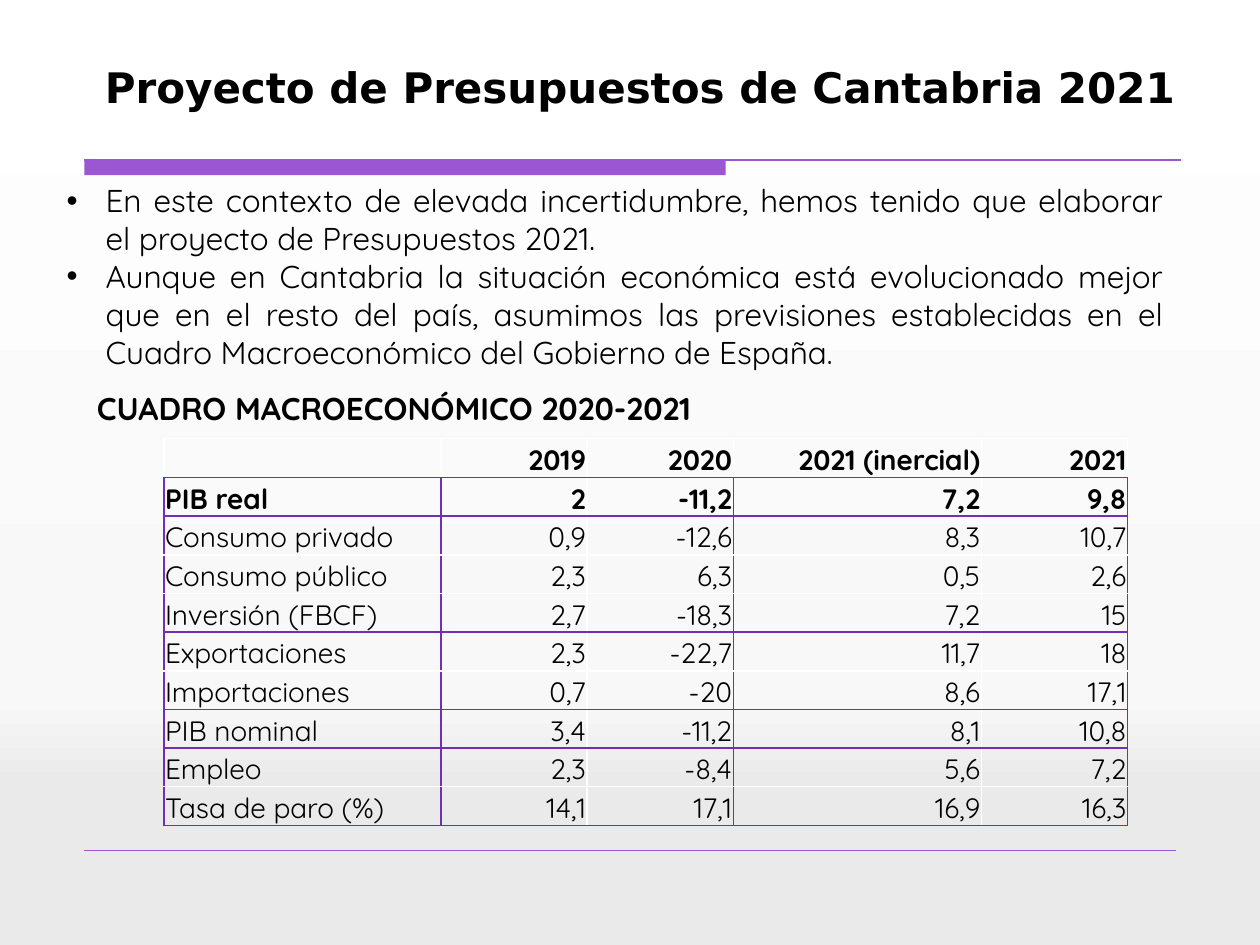
"""Build the macroeconomic table slide of the Cantabria 2021 budget."""
from dataclasses import dataclass

import lxml.etree
import pptx
import pptx.dml.color
import pptx.enum.shapes
import pptx.enum.text
import pptx.oxml
import pptx.oxml.ns
import pptx.slide
import pptx.table
import pptx.text.text
import pptx.util

Inches = pptx.util.Inches
Pt = pptx.util.Pt
RGBColor = pptx.dml.color.RGBColor
Align = pptx.enum.text.PP_ALIGN
Anchor = pptx.enum.text.MSO_ANCHOR
qn = pptx.oxml.ns.qn

BLACK = RGBColor(0x00, 0x00, 0x00)
WHITE = RGBColor(0xFF, 0xFF, 0xFF)
LILAC = RGBColor(0x9B, 0x57, 0xD3)
PURPLE = RGBColor(0x76, 0x2E, 0xB1)
PALE_GREY = RGBColor(0xF8, 0xF8, 0xF8)
GREY = RGBColor(0xEA, 0xEA, 0xEA)

BACKGROUND_STOPS = [(0, WHITE), (74, PALE_GREY), (83, GREY), (100, GREY)]
BODY_FONT = "Quicksand"
BULLETS = [
    "En este contexto de elevada incertidumbre, hemos tenido que elaborar "
    "el proyecto de Presupuestos 2021.",
    "Aunque en Cantabria la situación económica está evolucionado mejor que en "
    "el resto del país, asumimos las previsiones establecidas en el Cuadro "
    "Macroeconómico del Gobierno de España.",
]
FORECAST = [
    ["", "2019", "2020", "2021 (inercial)", "2021"],
    ["PIB real", "2", "-11,2", "7,2", "9,8"],
    ["Consumo privado", "0,9", "-12,6", "8,3", "10,7"],
    ["Consumo público", "2,3", "6,3", "0,5", "2,6"],
    ["Inversión (FBCF)", "2,7", "-18,3", "7,2", "15"],
    ["Exportaciones", "2,3", "-22,7", "11,7", "18"],
    ["Importaciones", "0,7", "-20", "8,6", "17,1"],
    ["PIB nominal", "3,4", "-11,2", "8,1", "10,8"],
    ["Empleo", "2,3", "-8,4", "5,6", "7,2"],
    ["Tasa de paro (%)", "14,1", "17,1", "16,9", "16,3"],
]
COLUMN_WIDTHS = [2.2, 1.16, 1.16, 1.97, 1.16]
ROW_HEIGHT = 0.307
BOLD_ROWS = 2
PURPLE_COLUMN_EDGES = {0, 1, 3, 5}
PURPLE_ROW_EDGES = {1, 2, 5, 7, 8, 10}


@dataclass(frozen=True)
class Area:
    """Position and size in inches."""

    left: float
    top: float
    width: float
    height: float

    def lengths(self) -> list[int]:
        """Return the four values as slide lengths."""
        return [Inches(value) for value in (self.left, self.top, self.width, self.height)]


@dataclass(frozen=True)
class Rule:
    """Horizontal line across the slide."""

    start: float
    end: float
    top: float
    weight: float


RULES = [Rule(0.67, 9.37, 1.27, 0.75), Rule(0.67, 9.33, 6.75, 0.25)]


def paint_background(page: pptx.slide.Slide) -> None:
    """Fill the page with the vertical grey gradient."""
    fill = page.background.fill
    fill.gradient()
    fill.gradient_angle = 270
    stops = next(page.element.iter(qn("a:gsLst")))
    for stop in list(stops):
        stops.remove(stop)
    for percent, color in BACKGROUND_STOPS:
        stop = lxml.etree.SubElement(stops, qn("a:gs"), pos=str(percent * 1000))
        lxml.etree.SubElement(stop, qn("a:srgbClr"), val=str(color))


def add_span(
    para: pptx.text.text._Paragraph, text: str, size: float, bold: bool, font: str = BODY_FONT
) -> None:
    """Add one formatted run."""
    span = para.add_run()
    span.text = text
    span.font.size = Pt(size)
    span.font.name = font
    span.font.bold = bold
    span.font.color.rgb = BLACK


def add_rule(page: pptx.slide.Slide, rule: Rule) -> None:
    """Draw a horizontal rule without shadow."""
    top = Inches(rule.top)
    line = page.shapes.add_connector(
        pptx.enum.shapes.MSO_CONNECTOR.STRAIGHT, Inches(rule.start), top, Inches(rule.end), top
    )
    line.line.color.rgb = LILAC
    line.line.width = Pt(rule.weight)
    lxml.etree.SubElement(line.element.spPr, qn("a:effectLst"))


def add_bar(page: pptx.slide.Slide, area: Area) -> None:
    """Draw the solid bar under the title."""
    bar = page.shapes.add_shape(pptx.enum.shapes.MSO_SHAPE.RECTANGLE, *area.lengths())
    bar.shadow.inherit = False
    bar.fill.solid()
    bar.fill.fore_color.rgb = LILAC
    bar.line.fill.background()


def set_title(page: pptx.slide.Slide, area: Area, text: str) -> None:
    """Place and format the title placeholder."""
    title = page.shapes.title
    title.left, title.top, title.width, title.height = area.lengths()
    title.text_frame.vertical_anchor = Anchor.TOP
    title.text_frame.auto_size = pptx.enum.text.MSO_AUTO_SIZE.NONE
    para = title.text_frame.paragraphs[0]
    para.alignment = Align.CENTER
    add_span(para, text, 24, True, "DejaVu Sans")


def add_box(page: pptx.slide.Slide, area: Area) -> pptx.text.text.TextFrame:
    """Add a wrapping text box and return its frame."""
    frame = page.shapes.add_textbox(*area.lengths()).text_frame
    frame.word_wrap = True
    return frame


def add_bullets(page: pptx.slide.Slide, area: Area, texts: list[str]) -> None:
    """Add justified bullet paragraphs."""
    frame = add_box(page, area)
    for index, text in enumerate(texts):
        para = frame.add_paragraph() if index else frame.paragraphs[0]
        para.alignment = Align.JUSTIFY
        properties = para._p.get_or_add_pPr()
        properties.set("marL", str(Inches(0.31)))
        properties.set("indent", str(-Inches(0.31)))
        lxml.etree.SubElement(properties, qn("a:buFont"), typeface="Arial")
        lxml.etree.SubElement(properties, qn("a:buChar"), char="•")
        add_span(para, text, 18, False)


def set_borders(cell: pptx.table._Cell, row: int, column: int) -> None:
    """Colour the four cell edges by their place in the grid."""
    edges = {
        "a:lnL": row > 0 and column in PURPLE_COLUMN_EDGES,
        "a:lnR": row > 0 and column + 1 in PURPLE_COLUMN_EDGES,
        "a:lnT": row in PURPLE_ROW_EDGES,
        "a:lnB": row + 1 in PURPLE_ROW_EDGES,
    }
    properties = cell._tc.get_or_add_tcPr()
    for tag, purple in edges.items():
        edge = lxml.etree.SubElement(properties, qn(tag), w=str(Pt(1)))
        fill = lxml.etree.SubElement(edge, qn("a:solidFill"))
        lxml.etree.SubElement(fill, qn("a:srgbClr"), val=str(PURPLE if purple else WHITE))


def add_forecast_table(page: pptx.slide.Slide, left: float, top: float) -> None:
    """Add the forecast table."""
    area = Area(left, top, sum(COLUMN_WIDTHS), ROW_HEIGHT * len(FORECAST))
    table = page.shapes.add_table(len(FORECAST), len(COLUMN_WIDTHS), *area.lengths()).table
    table.first_row = table.horz_banding = False
    for column, width in zip(table.columns, COLUMN_WIDTHS):
        column.width = Inches(width)
    for row, values in enumerate(FORECAST):
        table.rows[row].height = Inches(ROW_HEIGHT)
        for column, value in enumerate(values):
            cell = table.cell(row, column)
            cell.margin_left = cell.margin_right = cell.margin_top = Inches(0.01)
            cell.margin_bottom = 0
            cell.vertical_anchor = Anchor.BOTTOM
            set_borders(cell, row, column)
            cell.fill.background()
            para = cell.text_frame.paragraphs[0]
            para.alignment = Align.RIGHT if column else Align.LEFT
            add_span(para, value, 16, row < BOLD_ROWS)


def main() -> None:
    """Build and save the deck."""
    deck = pptx.Presentation()
    deck.slide_width, deck.slide_height = Inches(10), Inches(7.5)
    page = deck.slides.add_slide(deck.slide_layouts[5])
    paint_background(page)
    add_bar(page, Area(0.67, 1.27, 5.09, 0.12))
    for rule in RULES:
        add_rule(page, rule)
    set_title(page, Area(0.67, 0.44, 8.82, 1.11), "Proyecto de Presupuestos de Cantabria 2021")
    add_bullets(page, Area(0.43, 1.39, 8.9, 1.62), BULLETS)
    add_forecast_table(page, 1.3, 3.48)
    heading = add_box(page, Area(0.67, 3.04, 7.01, 0.4))
    add_span(heading.paragraphs[0], "CUADRO MACROECONÓMICO 2020-2021", 18, True)
    deck.save("out.pptx")


if __name__ == "__main__":
    main()
